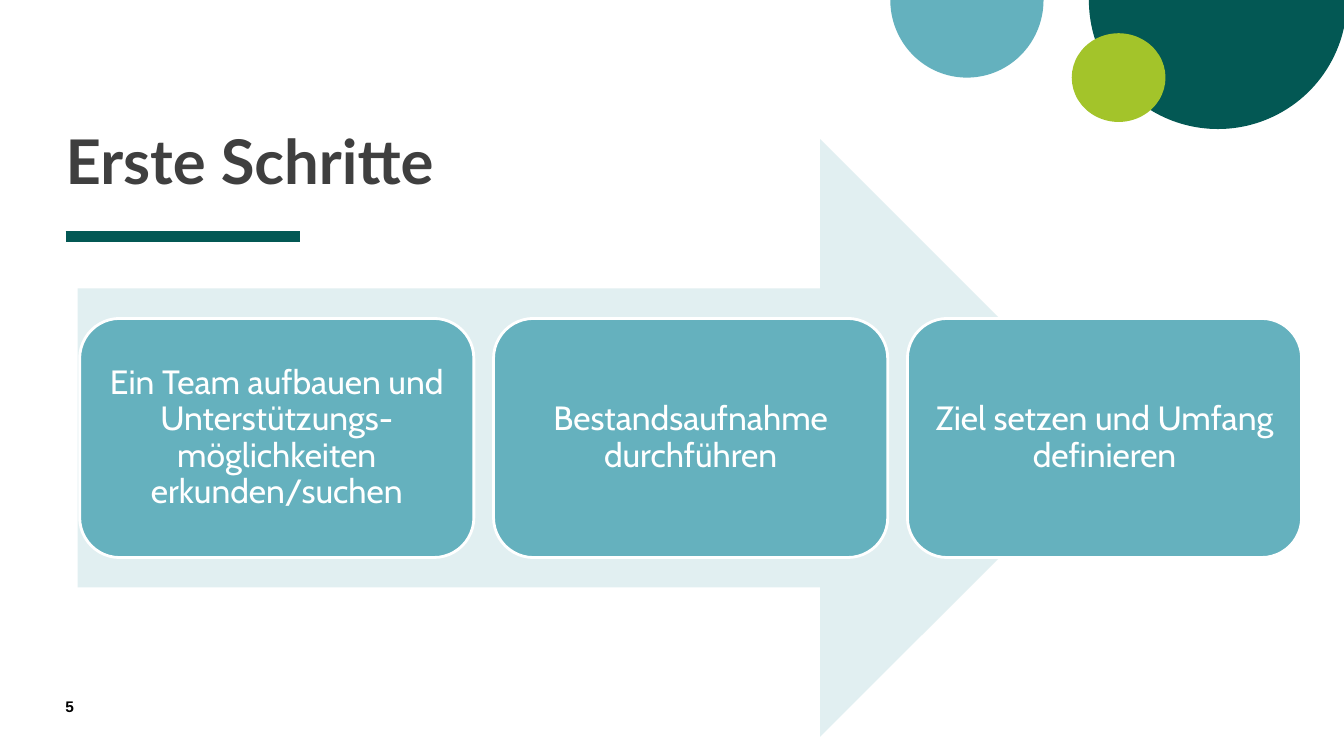
import pptx
import pptx.dml.color
import pptx.enum.shapes
import pptx.enum.text
import pptx.oxml.ns
import pptx.util
import lxml.etree

Inches = pptx.util.Inches
Pt = pptx.util.Pt
SHAPE = pptx.enum.shapes.MSO_SHAPE
ALIGN = pptx.enum.text.PP_ALIGN
ANCHOR = pptx.enum.text.MSO_ANCHOR

COLORS = {
    "dark": "035854",
    "teal": "64B1BE",
    "step": "65B1BE",
    "lime": "A3C42A",
    "arrow": "E1EFF1",
    "title": "3F3F3F",
    "white": "FFFFFF",
    "black": "000000",
}

STEPS = [
    "Ein Team aufbauen und Unterstützungs- möglichkeiten erkunden/suchen",
    "Bestandsaufnahme durchführen",
    "Ziel setzen und Umfang definieren",
]


def rgb(name):
    return pptx.dml.color.RGBColor.from_string(COLORS[name])


def add_filled(slide, kind, box, color, adjustments=()):
    sp = slide.shapes.add_shape(kind, *map(Inches, box))
    sp.shadow.inherit = False
    sp.fill.solid()
    sp.fill.fore_color.rgb = rgb(color)
    sp.line.fill.background()
    for i, value in enumerate(adjustments):
        sp.adjustments[i] = value
    return sp


def write(sp, text, font, size, color, bold=False, align=ALIGN.LEFT,
          anchor=ANCHOR.TOP, spacing=1.0, inset=0):
    tf = sp.text_frame
    tf.word_wrap = True
    tf.vertical_anchor = anchor
    tf.margin_left = tf.margin_right = Inches(inset)
    tf.margin_top = tf.margin_bottom = Inches(inset)
    p = tf.paragraphs[0]
    p.alignment = align
    p.line_spacing = spacing
    r = p.add_run()
    r.text = text
    r.font.name = font
    r.font.size = Pt(size)
    r.font.bold = bold
    r.font.color.rgb = rgb(color)


def add_circles(slide, left, top):
    half = (0, 108)
    add_filled(slide, SHAPE.PIE, (left + 1.97, top - 1.28, 2.56, 2.56), "dark", half)
    add_filled(slide, SHAPE.PIE, (left, top - 0.77, 1.52, 1.54), "teal", half)
    add_filled(slide, SHAPE.OVAL, (left + 1.8, top + 0.33, 0.93, 0.88), "lime")


def add_title(slide, left, top, width, height):
    sp = slide.shapes.add_textbox(*map(Inches, (left, top, width, height)))
    write(sp, "Erste Schritte", "Lato", 44, "title", bold=True,
          anchor=ANCHOR.BOTTOM, spacing=0.8)
    y = top + height + 0.4
    rule = slide.shapes.add_connector(
        pptx.enum.shapes.MSO_CONNECTOR.STRAIGHT,
        *map(Inches, (left, y, left + 2.33, y)))
    rule.line.color.rgb = rgb("dark")
    rule.line.width = Pt(8)
    lxml.etree.SubElement(rule._element.spPr, pptx.oxml.ns.qn("a:effectLst"))


def add_process(slide, left, top, width, height):
    add_filled(slide, SHAPE.RIGHT_ARROW, (left, top, width, height), "arrow", (0.5, 0.5))
    step_w, step_h, pitch = 3.91, 0.4 * height, 4.105
    step_top = top + (height - step_h) / 2
    for i, text in enumerate(STEPS):
        box = (left + 0.02 + i * pitch, step_top, step_w, step_h)
        sp = add_filled(slide, SHAPE.ROUNDED_RECTANGLE, box, "step", (0.167,))
        sp.line.color.rgb = rgb("white")
        sp.line.width = Pt(2)
        write(sp, text, "Cabin", 24, "white", align=ALIGN.CENTER,
              anchor=ANCHOR.MIDDLE, spacing=0.9, inset=0.15)


def add_page_number(slide, left, top, width, height):
    sp = slide.shapes.add_textbox(*map(Inches, (left, top, width, height)))
    write(sp, "5", "Arial", 11, "black", bold=True)


def main():
    prs = pptx.Presentation()
    prs.slide_width = Inches(13.33)
    prs.slide_height = Inches(7.5)
    slide = prs.slides.add_slide(prs.slide_layouts[6])
    add_circles(slide, 8.83, 0)
    add_title(slide, 0.65, 0.21, 7.42, 1.74)
    add_process(slide, 0.77, 1.38, 10.33, 5.93)
    add_page_number(slide, 0.65, 6.92, 0.57, 0.27)
    prs.save("out.pptx")


if __name__ == "__main__":
    main()
